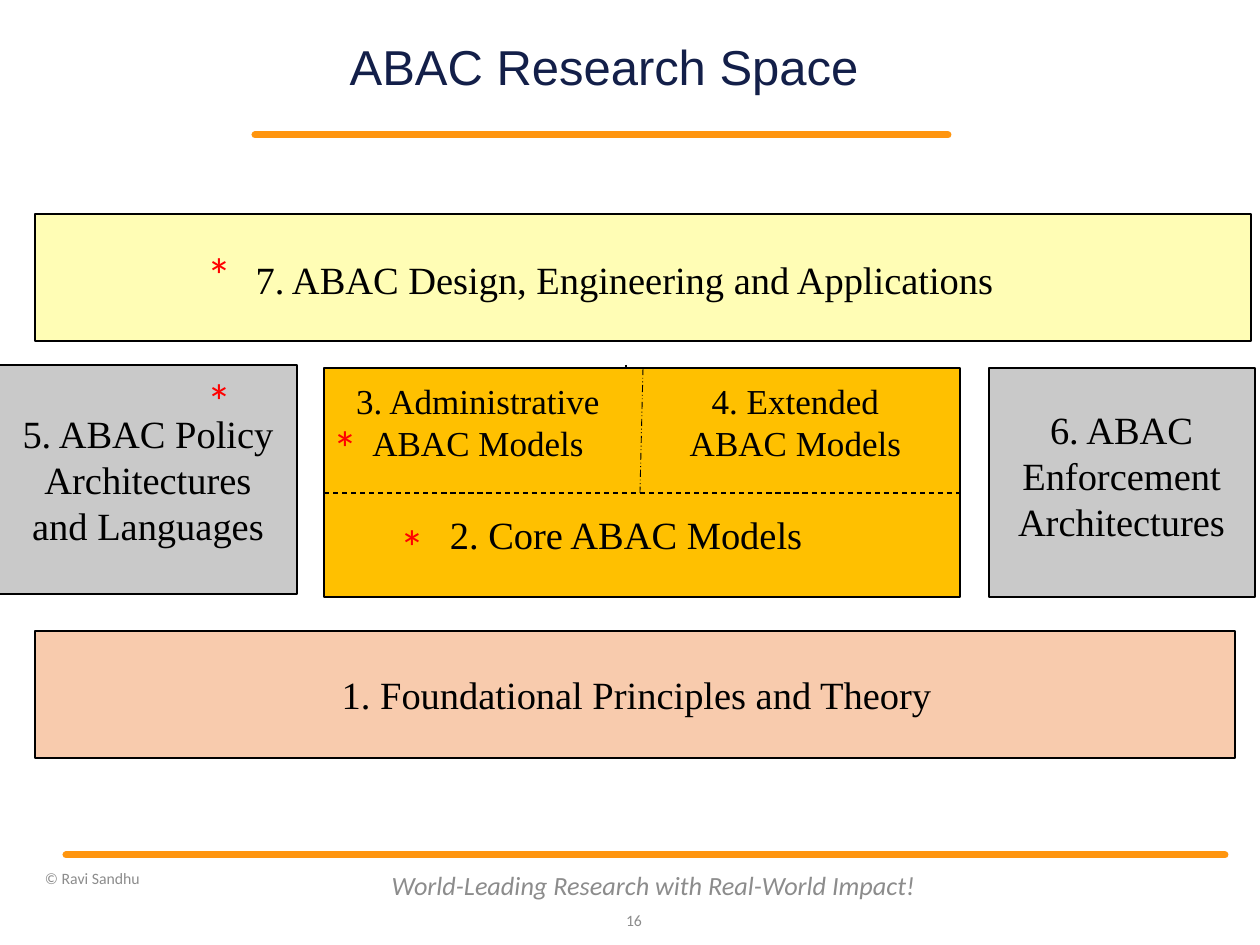
from dataclasses import dataclass

from lxml.etree import SubElement
from pptx import Presentation
from pptx.dml.color import RGBColor
from pptx.enum.dml import MSO_LINE
from pptx.enum.shapes import MSO_CONNECTOR, MSO_SHAPE
from pptx.enum.text import MSO_ANCHOR, PP_ALIGN
from pptx.oxml.ns import qn
from pptx.util import Pt

PX = 914400 / 126


@dataclass(frozen=True)
class Theme:
    navy: str = "131F49"
    orange: str = "FF950E"
    gray: str = "8C8C8C"
    black: str = "000000"
    red: str = "FF0000"
    yellow: str = "FFFDB5"
    gold: str = "FFC000"
    silver: str = "C9C9C9"
    peach: str = "F8CBAD"
    head: int = 28
    body: int = 22
    model: int = 20
    motto: int = 15
    small: int = 9
    sans: str = "Arial"
    serif: str = "Times New Roman"
    foot: str = "Calibri"


theme = Theme()
deck = Presentation()
deck.slide_width, deck.slide_height = int(1260 * PX), int(945 * PX)
slide = deck.slides.add_slide(deck.slide_layouts[5])
shapes = slide.shapes


def put(text, box, size=theme.body, font=theme.serif, color=theme.black, fill=None,
        align=PP_ALIGN.CENTER, anchor=MSO_ANCHOR.TOP, inset=(14, 7), wrap=True,
        italic=False, space=None, shape=None):
    """Write text in a new text box, or in the given shape, placed at box in px."""
    place = [int(n * PX) for n in box]
    shape = shape or shapes.add_textbox(*place)
    shape.left, shape.top, shape.width, shape.height = place
    if fill:
        shape.fill.solid()
        shape.fill.fore_color.rgb = RGBColor.from_string(fill)
    frame = shape.text_frame
    frame.text = text
    frame.word_wrap, frame.vertical_anchor = wrap, anchor
    frame.margin_left = frame.margin_right = int(inset[0] * PX)
    frame.margin_top = frame.margin_bottom = int(inset[1] * PX)
    for para in frame.paragraphs:
        para.alignment, para.line_spacing = align, space
        for run in para.runs:
            run.font.size, run.font.name, run.font.italic = Pt(size), font, italic
            run.font.color.rgb = RGBColor.from_string(color)


def rule(ends, color=theme.black, width=0.75, dash=None, cap="flat"):
    line = shapes.add_connector(MSO_CONNECTOR.STRAIGHT, *[int(n * PX) for n in ends])
    line.line.color.rgb = RGBColor.from_string(color)
    line.line.width = Pt(width)
    if dash:
        line.line.dash_style = dash
    props = line.element.spPr
    props.find(qn("a:ln")).set("cap", cap)
    SubElement(props, qn("a:effectLst"))


# Title, footer and the two orange rules
put("ABAC Research Space", (273, 38, 662, 64), size=theme.head, font=theme.sans,
    color=theme.navy, anchor=MSO_ANCHOR.MIDDLE, inset=(0, 0), space=0.9, shape=shapes.title)
for left, right, y in [(255, 948, 135), (66, 1225, 855)]:
    rule((left, y, right, y), theme.orange, 4, cap="rnd")

for text, box, size, align, italic in [
    ("World-Leading Research with Real-World Impact!", (378, 860, 551, 50),
     theme.motto, PP_ALIGN.CENTER, True),
    ("16", (605, 895, 50, 50), theme.small, PP_ALIGN.RIGHT, False),
    ("© Ravi Sandhu", (32, 856, 346, 45), theme.small, PP_ALIGN.LEFT, False),
]:
    put(text, box, size, theme.foot, theme.gray, align=align, italic=italic,
        anchor=MSO_ANCHOR.MIDDLE, inset=(13, 6))

# Research areas and the lines that divide the models
rule((626, 365, 626, 493), dash=MSO_LINE.DASH)
for box, fill in [
    ((35, 631, 1200, 127), theme.peach),
    ((324, 368, 636, 229), theme.gold),
    ((-1, 365, 298, 229), theme.silver),
    ((989, 368, 266, 229), theme.silver),
    ((35, 214, 1216, 127), theme.yellow),
]:
    area = shapes.add_shape(MSO_SHAPE.RECTANGLE, *[int(n * PX) for n in box])
    area.shadow.inherit = False
    area.fill.solid()
    area.fill.fore_color.rgb = RGBColor.from_string(fill)
    area.line.color.rgb = RGBColor.from_string(theme.black)
    area.line.width = Pt(0.75)
rule((324, 493, 960, 493), dash=MSO_LINE.DASH)

for text, box, size, fill in [
    ("1. Foundational Principles and Theory", (128, 664, 1017, 60), theme.body, None),
    ("2. Core ABAC Models", (345, 504, 562, 60), theme.body, theme.gold),
    ("3. Administrative\nABAC Models", (335, 373, 286, 98), theme.model, theme.gold),
    ("4. Extended\nABAC Models", (663, 373, 265, 98), theme.model, theme.gold),
    ("5. ABAC Policy\nArchitectures and Languages", (4, 403, 288, 154),
     theme.body, theme.silver),
    ("6. ABAC Enforcement Architectures", (1000, 399, 243, 154), theme.body, theme.silver),
    ("7. ABAC Design, Engineering and Applications", (116, 249, 1017, 60),
     theme.body, None),
]:
    put(text, box, size, fill=fill)
rule((643, 368, 640, 493), width=0.5, dash=MSO_LINE.DASH_DOT_DOT)

for x, y in [(194, 238), (194, 364), (320, 411), (387, 510)]:
    put("*", (x, y, 50, 72), theme.head, theme.foot, theme.red,
        align=PP_ALIGN.LEFT, inset=(13, 6), wrap=False)

deck.save("out.pptx")
